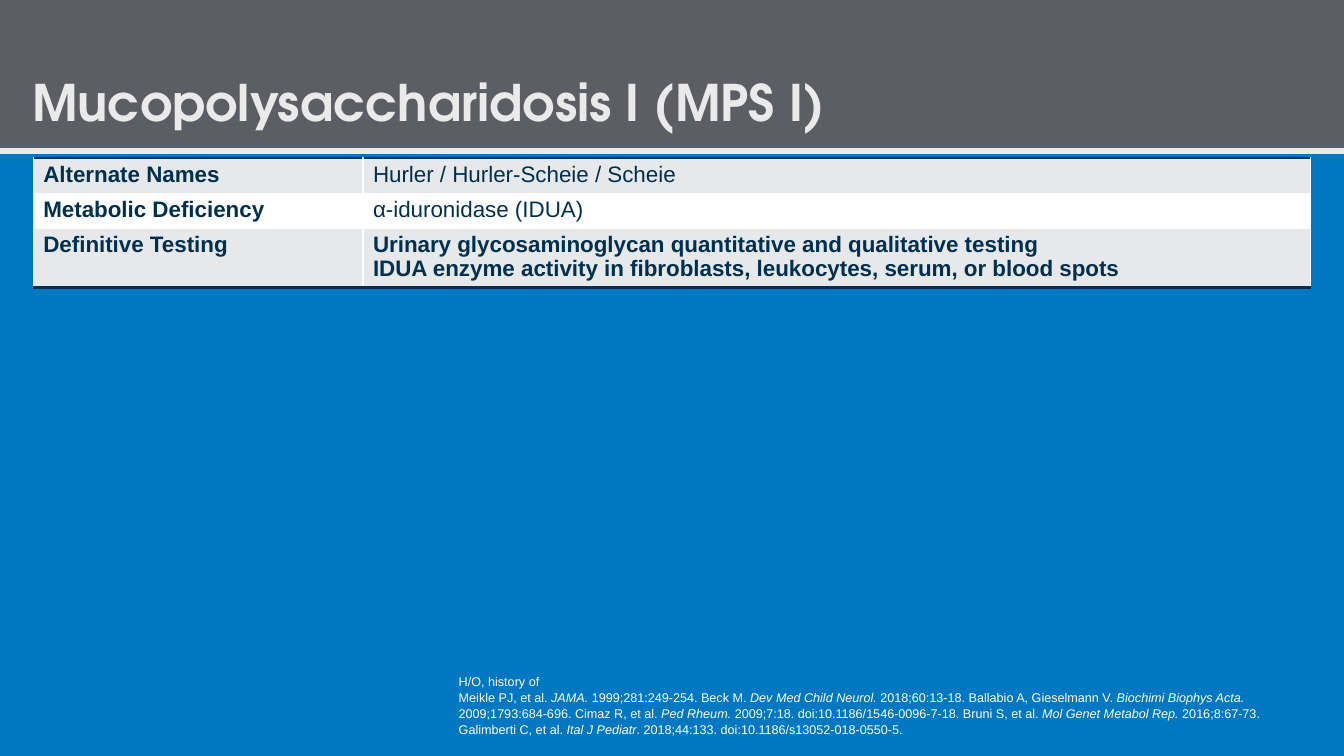
from lxml import etree
from pptx import Presentation
from pptx.dml.color import RGBColor
from pptx.enum.shapes import MSO_CONNECTOR as Link, MSO_SHAPE as Shape
from pptx.enum.text import MSO_ANCHOR as Anchor, MSO_AUTO_SIZE as Fit, PP_ALIGN as Align
from pptx.oxml.ns import qn
from pptx.util import Inches, Pt

NAVY, PALE, WHITE = "003050", "EAEAEA", "FFFFFF"
ROWS = [
    ("Alternate Names", ["Hurler / Hurler-Scheie / Scheie"], False),
    ("Metabolic Deficiency", ["α-iduronidase (IDUA)"], False),
    ("Definitive Testing", [
        "Urinary glycosaminoglycan quantitative and qualitative testing",
        "IDUA enzyme activity in fibroblasts, leukocytes, serum, or blood spots",
    ], True),
]
# Plain and italic pieces take turns
CITES = [
    "Meikle PJ, et al. ", "JAMA.",
    " 1999;281:249-254. Beck M. ", "Dev Med Child Neurol. ",
    "2018;60:13-18. Ballabio A, Gieselmann V. ", "Biochimi Biophys Acta. ",
    "2009;1793:684-696. Cimaz R, et al. ", "Ped Rheum. ",
    "2009;7:18. doi:10.1186/1546-0096-7-18. Bruni S, et al. ", "Mol Genet Metabol Rep. ",
    "2016;8:67-73. Galimberti C, et al. ", "Ital J Pediatr",
    ". 2018;44:133. doi:10.1186/s13052-018-0550-5.",
]


def tint(code):
    return RGBColor.from_string(code)


def place(*sizes):
    return [Inches(size) for size in sizes]


def style(font, color, **values):
    font.color.rgb = tint(color)
    for key, value in values.items():
        setattr(font, key, value)


def set_frame(frame, insets):
    left, top, right, bottom = place(*insets)
    values = dict(margin_left=left, margin_top=top, margin_right=right,
                  margin_bottom=bottom, word_wrap=True, auto_size=Fit.NONE,
                  vertical_anchor=Anchor.BOTTOM)
    for key, value in values.items():
        setattr(frame, key, value)


def add_band(slide):
    band = slide.shapes.add_shape(Shape.RECTANGLE, *place(0, 0, 13.33, 1.46))
    band.shadow.inherit = False
    band.fill.solid()
    band.fill.fore_color.rgb = tint("5D5E63")
    band.line.fill.background()
    rule = slide.shapes.add_connector(Link.STRAIGHT, *place(0, 1.5, 13.33, 1.5))
    rule.line.color.rgb = tint(PALE)
    rule.line.width = Pt(4.5)
    etree.SubElement(rule._element.spPr, qn("a:effectLst"))
    # Move the band and rule behind the title
    tree = slide.shapes._spTree
    for spot, item in enumerate((band, rule), 2):
        tree.insert(spot, item._element)


def set_title(slide, text):
    title = slide.shapes.title
    title.left, title.top, title.width, title.height = place(0.32, 0.09, 12.7, 1.27)
    set_frame(title.text_frame, (0, 0.05, 0, 0.05))
    title.text_frame.text = text
    para = title.text_frame.paragraphs[0]
    para.alignment = Align.LEFT
    style(para.font, PALE, name="TeX Gyre Adventor", size=Pt(36), bold=True)


def add_edge(cell, side):
    edge = etree.Element(qn(f"a:{side}"), w=str(Pt(2)))
    fill = etree.SubElement(edge, qn("a:solidFill"))
    etree.SubElement(fill, qn("a:srgbClr"), val=NAVY)
    cell._tc.get_or_add_tcPr().insert(0, edge)


def fill_cell(cell, lines, color, bold):
    cell.fill.solid()
    cell.fill.fore_color.rgb = tint(color)
    cell.text_frame.text = "\n".join(lines)
    for para in cell.text_frame.paragraphs:
        para.line_spacing = 0.95
        style(para.font, NAVY, name="Arial", size=Pt(16), bold=bold)


def add_facts(slide):
    table = slide.shapes.add_table(len(ROWS), 2, *place(0.33, 1.57, 12.67, 1.28)).table
    table.first_row = table.horz_banding = False
    for col, width in zip(table.columns, place(3.27, 9.4)):
        col.width = width
    for row, height in zip(table.rows, place(0.35, 0.35, 0.58)):
        row.height = height
    for num, (label, lines, bold) in enumerate(ROWS):
        color = WHITE if num % 2 else "E7E8E9"
        fill_cell(table.cell(num, 0), [label], color, True)
        fill_cell(table.cell(num, 1), lines, color, bold)
    for col in range(2):
        add_edge(table.cell(0, col), "lnT")
        add_edge(table.cell(len(ROWS) - 1, col), "lnB")


def add_notes(slide):
    frame = slide.shapes.add_textbox(*place(4.55, 6.62, 8.46, 0.74)).text_frame
    set_frame(frame, (0, 0, 0.1, 0.05))
    for num, parts in enumerate((["H/O, history of"], CITES)):
        para = frame.add_paragraph() if num else frame.paragraphs[0]
        para.line_spacing = 1.05
        for spot, part in enumerate(parts):
            run = para.add_run()
            run.text = part
            style(run.font, WHITE, name="Arial", size=Pt(9), italic=spot % 2 == 1)


def main():
    deck = Presentation()
    deck.slide_width, deck.slide_height = place(13.33, 7.5)
    slide = deck.slides.add_slide(deck.slide_layouts[5])
    slide.background.fill.solid()
    slide.background.fill.fore_color.rgb = tint("0078C1")
    # Header
    add_band(slide)
    set_title(slide, "Mucopolysaccharidosis I (MPS I)")
    # Content and references
    add_facts(slide)
    add_notes(slide)
    deck.save("out.pptx")


if __name__ == "__main__":
    main()
